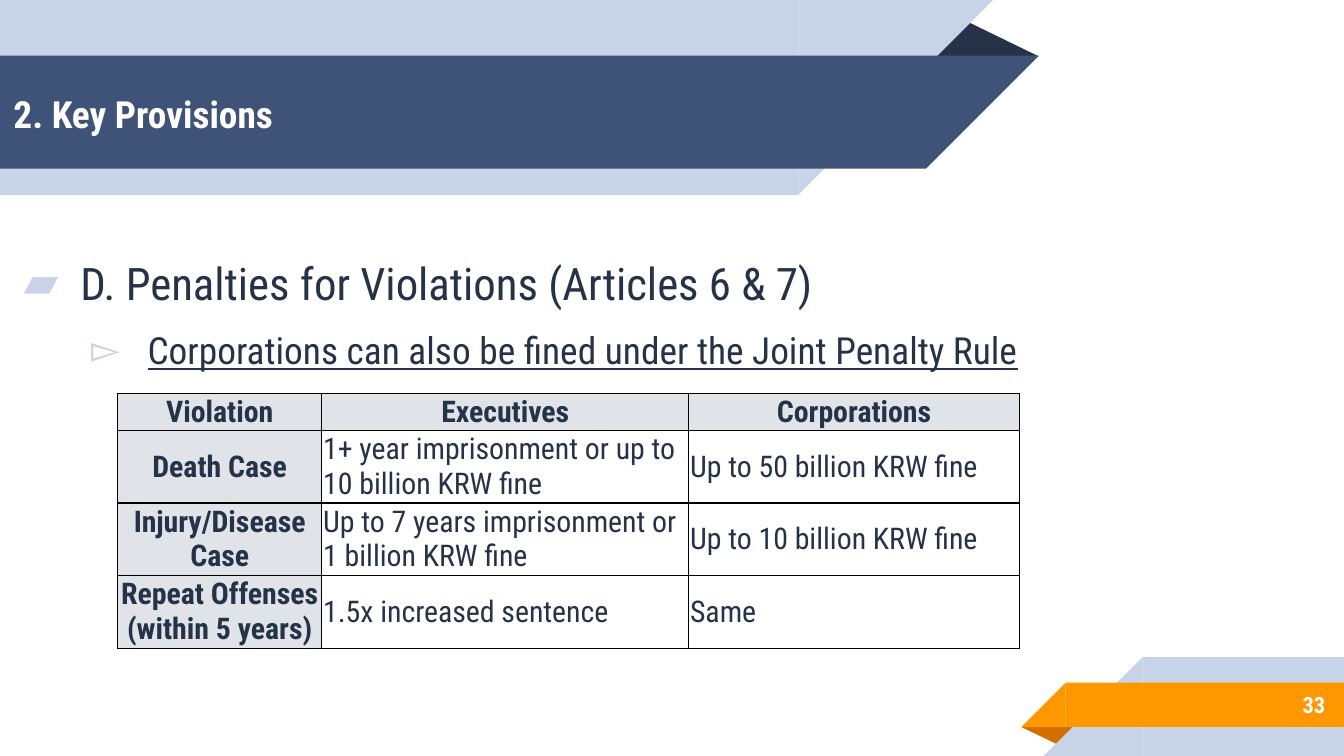
import lxml.etree
import pptx
import pptx.dml.color
import pptx.enum.shapes
import pptx.enum.text
import pptx.oxml.ns
import pptx.util

SHAPE = pptx.enum.shapes.MSO_SHAPE
ALIGN = pptx.enum.text.PP_ALIGN
MIDDLE = pptx.enum.text.MSO_ANCHOR.MIDDLE
FONT = "Roboto Condensed"
NAVY, BLUE, PALE, ORANGE, RUST = "263248", "3F5378", "C7D3E6", "FF9800", "D26F00"
WHITE, BLACK, GREY = "FFFFFF", "000000", "E0E4E9"
PENALTIES = [
    ["Violation", "Executives", "Corporations"],
    ["Death Case", "1+ year imprisonment or up to 10 billion KRW fine", "Up to 50 billion KRW fine"],
    ["Injury/Disease Case", "Up to 7 years imprisonment or 1 billion KRW fine", "Up to 10 billion KRW fine"],
    ["Repeat Offenses (within 5 years)", "1.5x increased sentence", "Same"],
]


def color(hex_code):
    """Turn a hex string into a colour."""
    return pptx.dml.color.RGBColor.from_string(hex_code)


def unit(count):
    """Convert grid units, ten to the inch, to a length."""
    return pptx.util.Inches(count / 10)


def add_xml(parent, tag, **attributes):
    """Append a DrawingML element and return it."""
    return lxml.etree.SubElement(parent, pptx.oxml.ns.qn(tag), attributes)


def write(paragraph, text, size=16, fill=NAVY, bold=False, underline=False,
          align=ALIGN.LEFT, before=0, after=0):
    """Put one formatted run in a paragraph."""
    paragraph.alignment = align
    paragraph.space_before = pptx.util.Pt(before)
    paragraph.space_after = pptx.util.Pt(after)
    run = paragraph.add_run()
    run.text = text
    run.font.name = FONT
    run.font.size = pptx.util.Pt(size)
    run.font.bold = bold
    run.font.underline = underline
    run.font.color.rgb = color(fill)


class Deck:
    """Holds the style and the current slide on a grid of 100 by 56.25 units."""

    def __init__(self):
        """Open a title-only slide."""
        self.deck = pptx.Presentation()
        self.deck.slide_width, self.deck.slide_height = unit(100), unit(56.25)
        self.slide = self.deck.slides.add_slide(self.deck.slide_layouts[5])

    def shape(self, kind, left, top, width, height, fill, rotation=0):
        """Draw a flat preset shape."""
        shape = self.slide.shapes.add_shape(kind, *map(unit, (left, top, width, height)))
        shape.shadow.inherit = False
        shape.fill.solid()
        shape.fill.fore_color.rgb = color(fill)
        shape.line.fill.background()
        shape.rotation = rotation
        return shape

    def fold(self, left, top, width, height, fill, rotation=0):
        """Draw the shaded fold behind a ribbon."""
        self.shape(SHAPE.ISOSCELES_TRIANGLE, left, top, width, height, fill, rotation).adjustments[0] = 0.324

    def top_ribbon(self, top, width, height, fill):
        """Draw a band from the left edge with a slanted right end."""
        self.shape(SHAPE.RECTANGLE, 0, top, width, height, fill)
        self.shape(SHAPE.RIGHT_TRIANGLE, width, top, height, height, fill, 90)

    def bottom_ribbon(self, left, top, height, fill):
        """Draw a band to the right edge with a slanted left end."""
        self.shape(SHAPE.RECTANGLE, left, top, 100 - left, height, fill)
        self.shape(SHAPE.RIGHT_TRIANGLE, left - height, top, height, height, fill, 270)

    def frame(self, box):
        """Give a box the common insets, wrapping and anchor."""
        frame = box.text_frame
        frame.word_wrap = True
        frame.auto_size = pptx.enum.text.MSO_AUTO_SIZE.NONE
        frame.vertical_anchor = MIDDLE
        frame.margin_left = frame.margin_right = frame.margin_top = frame.margin_bottom = unit(1)
        return frame

    def text(self, left, top, width, height):
        """Add a text box and return its frame."""
        return self.frame(self.slide.shapes.add_textbox(*map(unit, (left, top, width, height))))

    def title(self, text, left, top, width, height):
        """Place the title in front of the ribbons."""
        title = self.slide.shapes.title
        title.left, title.top, title.width, title.height = map(unit, (left, top, width, height))
        write(self.frame(title).paragraphs[0], text, size=20, fill=WHITE, bold=True)
        title.element.getparent().append(title.element)

    def bullet(self, paragraph, text, mark, indent, level=0, **style):
        """Write a paragraph with a hanging bullet."""
        write(paragraph, text, **style)
        paragraph.level = level
        properties = paragraph._p.get_or_add_pPr()
        properties.set("marL", str(unit(indent)))
        properties.set("indent", str(-unit(4.2)))
        add_xml(add_xml(properties, "a:buClr"), "a:srgbClr", val=PALE)
        add_xml(properties, "a:buFont", typeface=FONT)
        add_xml(properties, "a:buChar", char=mark)

    def cell(self, cell, text, is_header):
        """Fill, border and write one table cell."""
        cell.margin_left = cell.margin_right = cell.margin_top = cell.margin_bottom = unit(0.1)
        cell.vertical_anchor = MIDDLE
        for side in "LRTB":
            border = add_xml(cell._tc.get_or_add_tcPr(), f"a:ln{side}", w=str(pptx.util.Pt(0.75)))
            add_xml(add_xml(border, "a:solidFill"), "a:srgbClr", val=BLACK)
        if is_header:
            cell.fill.solid()
            cell.fill.fore_color.rgb = color(GREY)
        else:
            cell.fill.background()
        write(cell.text_frame.paragraphs[0], text, bold=is_header, after=8,
              align=ALIGN.CENTER if is_header else ALIGN.LEFT)

    def table(self, rows, left, top, widths, heights):
        """Add a table whose first row and column are headers."""
        table = self.slide.shapes.add_table(
            len(rows), len(widths), *map(unit, (left, top, sum(widths), sum(heights)))).table
        table.first_row = table.horz_banding = False
        for column, width in zip(table.columns, widths):
            column.width = unit(width)
        for r, (row, height) in enumerate(zip(rows, heights)):
            table.rows[r].height = unit(height)
            for c, text in enumerate(row):
                self.cell(table.cell(r, c), text, r == 0 or c == 0)


def main():
    """Build the penalties slide."""
    deck = Deck()
    deck.fold(76, 54.1, 4.3, 1.4, RUST, 180)
    deck.bottom_ribbon(85, 48.9, 7.35, PALE)
    deck.bottom_ribbon(79.3, 50.8, 3.3, ORANGE)
    deck.fold(68.8, 1.4, 8.5, 2.8, NAVY)
    deck.top_ribbon(0, 59.4, 14.5, PALE)
    deck.top_ribbon(4.15, 68.9, 8.4, BLUE)
    deck.title("2. Key Provisions", 0, 4.25, 72.8, 8.4)

    provisions = deck.text(0, 17.95, 100, 10.8)
    deck.bullet(provisions.paragraphs[0], "D. Penalties for Violations (Articles 6 & 7)",
                "▰", 5, size=24, before=6)
    deck.bullet(provisions.add_paragraph(), "Corporations can also be fined under the Joint Penalty Rule",
                "▻", 10, level=1, size=20, before=10, underline=True)

    deck.table(PENALTIES, 8.75, 29.25, [15.2, 27.3, 24.6], [2.75] + [5.4] * 3)
    page = deck.text(83.3, 50.7, 16.3, 3.5)
    write(page.paragraphs[0], "33", size=12, fill=WHITE, bold=True, align=ALIGN.RIGHT)
    deck.deck.save("out.pptx")


if __name__ == "__main__":
    main()
